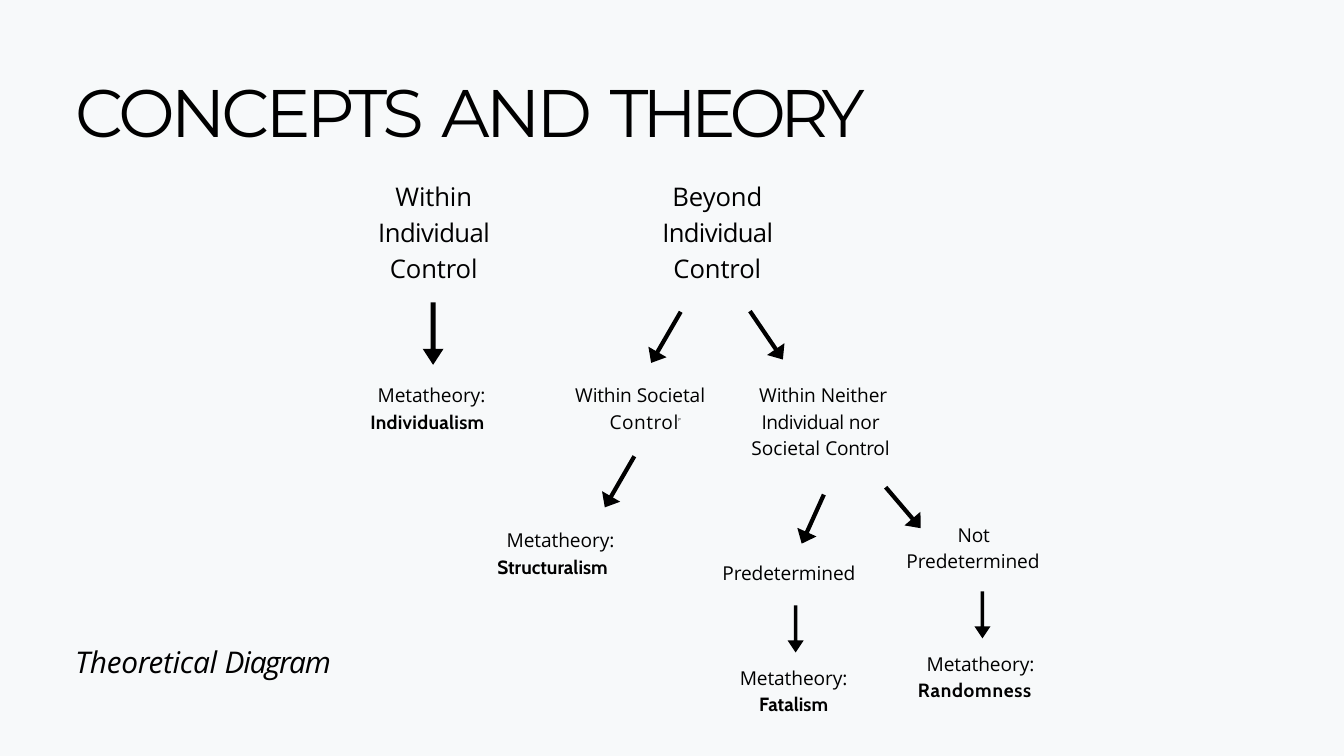
"""Build the concepts and theory diagram slide."""
from lxml.etree import SubElement
from pptx import Presentation
from pptx.dml.color import RGBColor
from pptx.enum.shapes import MSO_CONNECTOR as Link, MSO_SHAPE as Shape
from pptx.enum.text import PP_ALIGN as Align
from pptx.oxml.ns import qn
from pptx.util import Inches, Pt

color = RGBColor.from_string
INK = color("000000")


def draw(kind, at, fill):
    shape = slide.shapes.add_shape(kind, *map(Inches, at))
    shape.shadow.inherit = False
    shape.fill.solid()
    shape.fill.fore_color.rgb = fill
    shape.line.fill.background()
    return shape


def write(text, at, size=20.5, inset=0.01, align=Align.LEFT, margins=(0.01,),
          indent=0, before=(0.9,), line=None, font="Open Sans", italic=False):
    box = slide.shapes.add_textbox(*map(Inches, at)).text_frame
    box.word_wrap = True
    box.margin_left = box.margin_right = box.margin_bottom = 0
    box.margin_top = Inches(inset)
    for row, (runs, margin, space) in enumerate(zip(text, margins, before)):
        para = box.add_paragraph() if row else box.paragraphs[0]
        para.alignment, para.space_before, para.line_spacing = align, Pt(space), line
        props = para._p.get_or_add_pPr()
        props.set("marL", str(Inches(margin)))
        props.set("indent", str(Inches(indent)))
        for words, gap in runs:
            run = para.add_run()
            run.text = words
            run.font.name = "Cabin" if row else font
            run.font.size, run.font.bold = Pt(size), row > 0
            run.font.italic, run.font.color.rgb = italic, INK
            run._r.get_or_add_rPr().set("spc", str(round(gap * 100)))
    return box


deck = Presentation()
deck.slide_width, deck.slide_height = Inches(20), Inches(11.25)
slide = deck.slides.add_slide(deck.slide_layouts[6])
draw(Shape.RECTANGLE, (0, 0, 20, 11.25), color("F7F9FA"))

write([[("CONCEPTS", -4.3), (" ", 0), ("AND", -4), (" ", 0), ("THEORY", -6.5)]],
      (1.11, 1.04, 13.87, 1.23), size=72, font="Montserrat", before=(1,))

drops = [
    (6.29, 4.5, 0.31, 0.93, 0.23, 0.77),
    (11.72, 9.01, 0.24, 0.7, 0.21, 0.75),
    (14.5, 8.8, 0.24, 0.7, 0.21, 0.75),
]
for *at, shaft, head in drops:
    drop = draw(Shape.DOWN_ARROW, at, INK)
    drop.adjustments[0], drop.adjustments[1] = shaft, head

slants = [
    (10.13, 4.64, 9.69, 5.4),
    (11.16, 4.63, 11.65, 5.35),
    (12.26, 7.36, 11.93, 8.09),
    (13.18, 7.25, 13.7, 7.86),
    (9.44, 6.79, 9, 7.55),
]
for ends in slants:
    arrow = slide.shapes.add_connector(Link.STRAIGHT, *map(Inches, ends))
    arrow.line.color.rgb = INK
    arrow.line.width = Pt(4.5)
    SubElement(arrow.line._get_or_add_ln(), qn("a:tailEnd"),
               type="triangle", w="lg", len="med")
    SubElement(arrow._element.spPr, qn("a:effectLst"))

for left, word, gap in [(5.57, "Within ", -0.6), (9.79, "Beyond ", -0.7)]:
    write([[(word, -0.1), ("Individual ", gap), ("Control", -0.1)]],
          (left, 2.61, 1.76, 1.63), size=27.5, align=Align.CENTER, line=1.17)

write([[("Within ", -0.2), ("Neither ", -0.1), ("Individual ", -0.5),
        ("nor ", -0.2), ("Societal ", 0), ("Control", -0.3)]],
      (11.11, 5.65, 2.19, 1.2), align=Align.CENTER, indent=0.08, line=1.15)

box = write([[("Within ", -0.2), ("Societal ", -0.1), ("C", 0.6),
              ("ontro", 0.5), ("l", -4.6), ("P", 0.9)]],
            (8.52, 5.65, 2.09, 0.81), margins=(0.55,), indent=-0.51, line=1.15)
mark = box.paragraphs[0].runs[-1]
mark.font.size = Pt(7.5)
mark._r.get_or_add_rPr().set("baseline", "106000")

write([[("Predetermined", -0.1)]], (10.74, 8.34, 2.04, 0.37),
      inset=0.02, before=(1.1,))
write([[("Not ", -0.2), ("Predetermined", -0.1)]], (13.48, 7.72, 2.04, 0.81),
      indent=0.76, line=1.15)

theories = [
    (5.5, 5.65, 1.89, "Individualism", 0.3, (0.12, 0.01), Align.LEFT),
    (7.39, 7.81, 1.95, "Structuralism", 0, (0.15, 0.01), Align.LEFT),
    (10.97, 9.85, 1.68, "Fatalism", 0, (0, 0), Align.CENTER),
    (13.65, 9.65, 1.85, "Randomness", 0.8, (0.14, 0.01), Align.LEFT),
]
for left, top, width, name, gap, margins, align in theories:
    write([[("Metatheory:", -0.1)], [(name, gap)]], (left, top, width, 0.81),
          inset=0.06, align=align, margins=margins, before=(4.5, 3.6))

write([[("Theoretical ", -0.3), ("Diagram", -1.3)]], (1.11, 9.57, 4.28, 0.56),
      size=32, italic=True)

deck.save("out.pptx")
